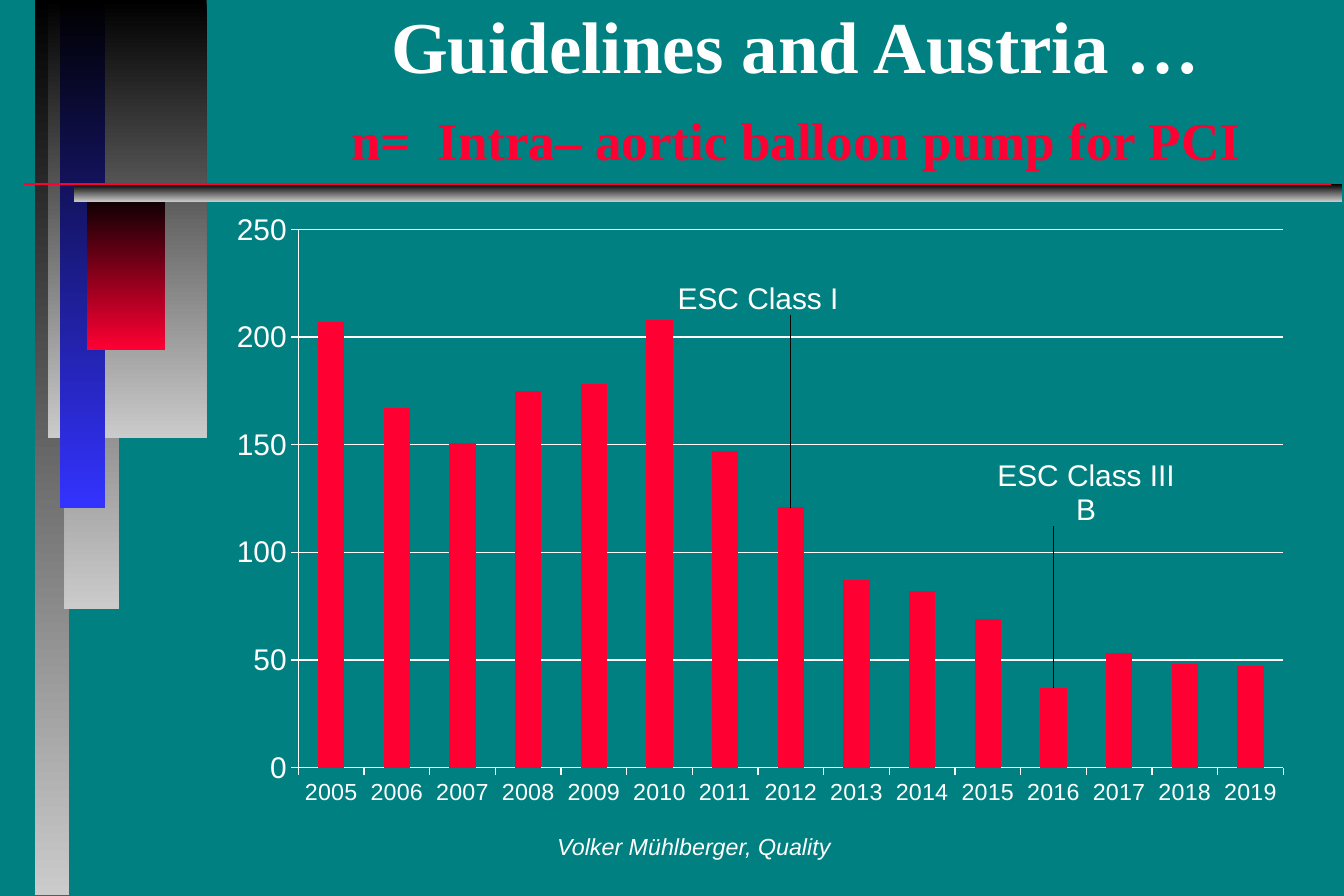
"""Build the slide on intra-aortic balloon pump use in Austria."""
from lxml import etree
from pptx import Presentation
from pptx.chart.data import CategoryChartData
from pptx.dml.color import RGBColor
from pptx.enum.chart import XL_CHART_TYPE, XL_LABEL_POSITION, XL_TICK_MARK
from pptx.enum.shapes import MSO_CONNECTOR, MSO_SHAPE
from pptx.enum.text import MSO_ANCHOR, MSO_AUTO_SIZE, PP_ALIGN
from pptx.oxml.ns import qn
from pptx.util import Inches, Pt

COLUMNS = XL_CHART_TYPE.COLUMN_CLUSTERED
OUTSIDE_END = XL_LABEL_POSITION.OUTSIDE_END
TICK_OUT, TICK_NONE = XL_TICK_MARK.OUTSIDE, XL_TICK_MARK.NONE
CENTER = PP_ALIGN.CENTER
WIDTH, HEIGHT = 11.25, 7.5
TITLE_FONT, BODY_FONT = "Times New Roman", "Arial"
COLORS = {"teal": "008080", "black": "000000", "silver": "CBCBCB",
          "blue": "3333FF", "red": "FF0033", "white": "FFFFFF"}

TITLE_LINES = [
    [("\tGuidelines and Austria …", 44, "white")],
    [("\t", 44, "white"), ("n=  Intra– aortic balloon pump for PCI", 32, "red")],
]
FOOTER = "Volker Mühlberger, Quality"
FIRST_YEAR = 2005
PUMPS = [207, 167, 151, 175, 178, 208, 147, 121, 87, 82, 69, 37, 53, 48, 47]
GUIDELINES = {2012: ("ESC Class I", -0.03, -0.31),
              2016: ("ESC Class III B", 0.03, -0.26)}
PLOT_AREA = {"x": 0.071, "y": 0.028, "w": 0.903, "h": 0.892}
BARS = [
    ((0.29, 0, 0.29, 7.49), "silver"),
    ((0.54, 0, 0.46, 5.1), "silver"),
    ((0.4, 0, 1.33, 3.67), "silver"),
    ((0.5, 0, 0.38, 4.25), "blue"),
    ((0.73, 1.6, 0.65, 1.33), "red"),
    ((0.62, 1.54, 10.61, 0.15), "silver"),
]
RULE = (0.2, 1.54, 11.14, 1.54)
TITLE_BOX = (1.77, 0.25, 9.29, 1.27)
CHART_BOX = (1.85, 1.78, 9.13, 5.05)
FOOTER_BOX = (4.03, 6.83, 3.56, 0.5)


def color(name):
    return RGBColor.from_string(COLORS[name])


def inches(values):
    return [Inches(value) for value in values]


def style(font, size, name="white", face=BODY_FONT):
    font.size, font.name = Pt(size), face
    font.color.rgb = color(name)


def add_run(paragraph, text, size, name="white", face=BODY_FONT):
    run = paragraph.add_run()
    run.text = text
    style(run.font, size, name, face)
    return run


def manual_layout(settings):
    layout = etree.Element(qn("c:layout"))
    manual = etree.SubElement(layout, qn("c:manualLayout"))
    for tag, value in settings.items():
        etree.SubElement(manual, qn(f"c:{tag}")).set("val", str(value))
    return layout


def add_decoration(slide):
    for box, end in BARS:
        shape = slide.shapes.add_shape(MSO_SHAPE.RECTANGLE, *inches(box))
        shape.shadow.inherit = False
        shape.line.fill.background()
        shape.fill.gradient()
        shape.fill.gradient_angle = 270
        for stop, name, position in zip(shape.fill.gradient_stops, ("black", end), (0, 1)):
            stop.color.rgb = color(name)
            stop.position = position
    rule = slide.shapes.add_connector(MSO_CONNECTOR.STRAIGHT, *inches(RULE))
    rule.line.color.rgb = color("red")
    rule.line.width = Pt(1)
    etree.SubElement(rule.element.spPr, qn("a:effectLst"))


def add_title(slide):
    title = slide.shapes.title
    title.left, title.top, title.width, title.height = inches(TITLE_BOX)
    frame = title.text_frame
    frame.auto_size = MSO_AUTO_SIZE.NONE
    frame.vertical_anchor = MSO_ANCHOR.BOTTOM
    paragraph = frame.paragraphs[0]
    paragraph.alignment = CENTER
    for number, line in enumerate(TITLE_LINES):
        if number:
            paragraph.add_line_break()
        for text, size, name in line:
            add_run(paragraph, text, size, name, TITLE_FONT).font.bold = True


def add_pump_chart(slide):
    data = CategoryChartData()
    data.categories = [str(FIRST_YEAR + index) for index in range(len(PUMPS))]
    data.add_series("AUT", PUMPS)
    chart = slide.shapes.add_chart(COLUMNS, *inches(CHART_BOX), data).chart
    chart.has_title = chart.has_legend = False
    style(chart.font, 18)
    plot = chart.plots[0]
    plot.gap_width = 150
    plot.vary_by_categories = False
    for axis, size in ((chart.category_axis, 14), (chart.value_axis, 18)):
        style(axis.tick_labels.font, size)
        axis.major_tick_mark, axis.minor_tick_mark = TICK_OUT, TICK_NONE
        axis.format.line.color.rgb = color("white")
    values = chart.value_axis
    values.minimum_scale, values.maximum_scale, values.major_unit = 0, 250, 50
    values.major_gridlines.format.line.color.rgb = color("white")
    series = plot.series[0]
    series.format.fill.solid()
    series.format.fill.fore_color.rgb = color("red")
    add_guideline_labels(chart, series)
    area = chart.element.xpath(".//c:plotArea")[0]
    for layout in area.findall(qn("c:layout")):
        area.remove(layout)
    area.insert(0, manual_layout({"layoutTarget": "inner", "xMode": "edge",
                                  "yMode": "edge", **PLOT_AREA}))


def add_guideline_labels(chart, series):
    series.data_labels.show_value = False
    for year, (text, _, _) in GUIDELINES.items():
        label = series.points[year - FIRST_YEAR].data_label
        add_run(label.text_frame.paragraphs[0], text, 18)
        label.position = OUTSIDE_END
    labels = chart.element.xpath(".//c:ser/c:dLbls/c:dLbl")
    for label, (_, x, y) in zip(labels, GUIDELINES.values()):
        for layout in label.findall(qn("c:layout")):
            label.remove(layout)
        label.insert(1, manual_layout({"x": x, "y": y}))


def add_footer(slide):
    frame = slide.shapes.add_textbox(*inches(FOOTER_BOX)).text_frame
    frame.word_wrap = False
    frame.vertical_anchor = MSO_ANCHOR.MIDDLE
    paragraph = frame.paragraphs[0]
    paragraph.alignment = CENTER
    add_run(paragraph, FOOTER, 14).font.italic = True


def main():
    presentation = Presentation()
    presentation.slide_width, presentation.slide_height = inches((WIDTH, HEIGHT))
    slide = presentation.slides.add_slide(presentation.slide_layouts[5])
    slide.background.fill.solid()
    slide.background.fill.fore_color.rgb = color("teal")
    add_decoration(slide)
    add_title(slide)
    add_pump_chart(slide)
    add_footer(slide)
    presentation.save("out.pptx")


if __name__ == "__main__":
    main()
